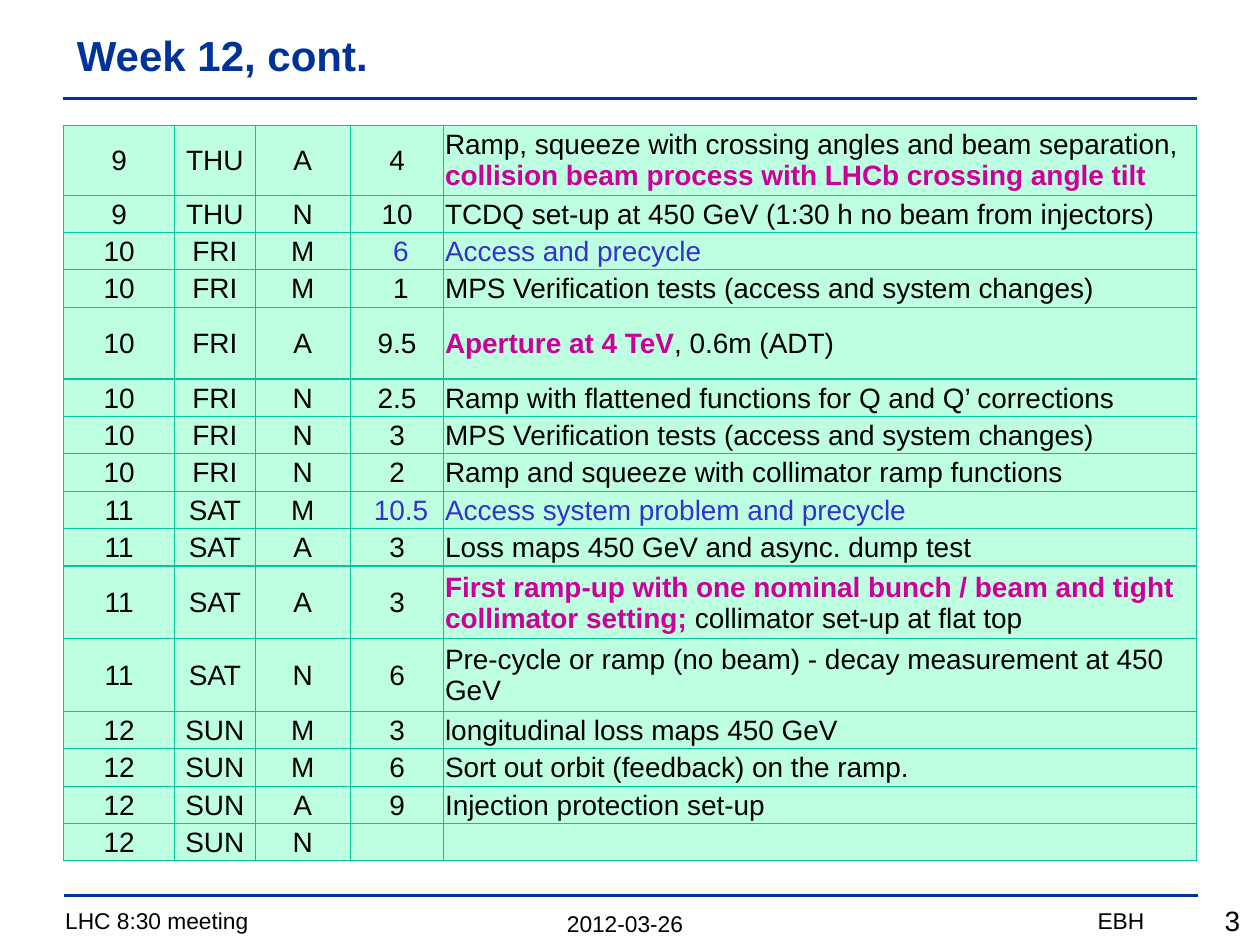
from dataclasses import dataclass

from lxml.etree import SubElement
from pptx import Presentation
from pptx.dml.color import RGBColor
from pptx.enum.text import MSO_ANCHOR, PP_ALIGN
from pptx.oxml.ns import qn
from pptx.util import Pt


@dataclass(frozen=True)
class Theme:
    font: str = "Arial"
    navy: str = "003399"
    text: str = "000000"
    access: str = "3333CC"
    highlight: str = "CC0099"
    cell: str = "BFFFE1"
    border: str = "00C896"
    title_size: float = 24
    body_size: float = 16
    footer_size: float = 13


THEME = Theme()
PLAIN = {}
ACCESS = {"color": THEME.access}
KEY = {"color": THEME.highlight, "bold": True}

TITLE = "Week 12, cont."
# Date, weekday, shift, hours, hours format, description spans
SCHEDULE = [
    ("9", "THU", "A", "4", PLAIN, [
        ("Ramp, squeeze with crossing angles and beam separation, ", PLAIN),
        ("collision beam process with LHCb crossing angle tilt", KEY)]),
    ("9", "THU", "N", "10", PLAIN, [("TCDQ set-up at 450 GeV (1:30 h no beam from injectors)", PLAIN)]),
    ("10", "FRI", "M", " 6", ACCESS, [("Access and precycle", ACCESS)]),
    ("10", "FRI", "M", " 1", PLAIN, [("MPS Verification tests (access and system changes)", PLAIN)]),
    ("10", "FRI", "A", "9.5", PLAIN, [("Aperture at 4 TeV", KEY), (", 0.6m (ADT)", PLAIN)]),
    ("10", "FRI", "N", "2.5", PLAIN, [("Ramp with flattened functions for Q and Q’ corrections", PLAIN)]),
    ("10", "FRI", "N", "3", PLAIN, [("MPS Verification tests (access and system changes)", PLAIN)]),
    ("10", "FRI", "N", "2", PLAIN, [("Ramp and squeeze with collimator ramp functions", PLAIN)]),
    ("11", "SAT", "M", " 10.5", ACCESS, [("Access system problem and precycle", ACCESS)]),
    ("11", "SAT", "A", "3", PLAIN, [("Loss maps 450 GeV and async. dump test", PLAIN)]),
    ("11", "SAT", "A", "3", PLAIN, [
        ("First ramp-up with one nominal bunch / beam and tight collimator setting; ", KEY),
        ("collimator set-up at flat top", PLAIN)]),
    ("11", "SAT", "N", "6", PLAIN, [("Pre-cycle or ramp (no beam) - decay measurement at 450 GeV", PLAIN)]),
    ("12", "SUN", "M", "3", PLAIN, [("longitudinal loss maps 450 GeV", PLAIN)]),
    ("12", "SUN", "M", "6", PLAIN, [("Sort out orbit (feedback) on the ramp.", PLAIN)]),
    ("12", "SUN", "A", "9", PLAIN, [("Injection protection set-up", PLAIN)]),
    ("12", "SUN", "N", "", PLAIN, []),
]
COLUMN_WIDTHS = [63.4, 46, 54.5, 53.4, 430.3]
ROW_HEIGHT = 21.4
TALL_ROWS = {0: 40, 4: 41, 10: 41.5, 11: 41.5}

# Text, (left, top, width, height), alignment, size
FOOTER = [
    ("2012-03-26", (174.2, 516.2, 365.8, 23), PP_ALIGN.CENTER, THEME.footer_size),
    ("LHC 8:30 meeting", (30.2, 514.8, 266.4, 23), PP_ALIGN.LEFT, THEME.footer_size),
    ("EBH", (450.7, 514.8, 210.2, 23), PP_ALIGN.RIGHT, THEME.footer_size),
    ("3", (632.9, 512.6, 82.8, 26.6), PP_ALIGN.RIGHT, THEME.body_size),
]
RULES = [(36, 56.2), (36.7, 511.9)]
RULE_LENGTH = 648


def add_span(para, text, size=THEME.body_size, color=THEME.text, bold=False, align=None):
    if align is not None:
        para.alignment = align
    span = para.add_run()
    span.text = text
    span.font.name = THEME.font
    span.font.size = Pt(size)
    span.font.bold = bold
    span.font.color.rgb = RGBColor.from_string(color)


def add_rule(slide, left, top):
    rule = slide.shapes.add_connector(1, Pt(left), Pt(top), Pt(left + RULE_LENGTH), Pt(top))
    rule.line.color.rgb = RGBColor.from_string(THEME.navy)
    rule.line.width = Pt(1.5)
    SubElement(rule.element.spPr, qn("a:effectLst"))


def format_cell(cell):
    cell.margin_left = cell.margin_right = cell.margin_top = Pt(0.72)
    cell.margin_bottom = 0
    cell.vertical_anchor = MSO_ANCHOR.MIDDLE
    properties = cell._tc.get_or_add_tcPr()
    for side in ("lnL", "lnR", "lnT", "lnB"):
        edge = SubElement(properties, qn(f"a:{side}"), w=str(Pt(0.75)))
        paint = SubElement(edge, qn("a:solidFill"))
        SubElement(paint, qn("a:srgbClr"), val=THEME.border)
    cell.fill.solid()
    cell.fill.fore_color.rgb = RGBColor.from_string(THEME.cell)


def add_schedule(slide):
    heights = [TALL_ROWS.get(index, ROW_HEIGHT) for index in range(len(SCHEDULE))]
    table = slide.shapes.add_table(
        len(SCHEDULE), len(COLUMN_WIDTHS), Pt(36.4), Pt(71.5),
        Pt(sum(COLUMN_WIDTHS)), Pt(sum(heights))).table
    table.first_row = table.horz_banding = False
    for column, width in zip(table.columns, COLUMN_WIDTHS):
        column.width = Pt(width)
    for row, height, entry in zip(table.rows, heights, SCHEDULE):
        row.height = Pt(height)
        date, day, shift, hours, hours_format, description = entry
        centred = [[(text, PLAIN)] for text in (date, day, shift)] + [[(hours, hours_format)]]
        for index, (cell, spans) in enumerate(zip(row.cells, centred + [description])):
            format_cell(cell)
            align = PP_ALIGN.CENTER if index < len(centred) else PP_ALIGN.LEFT
            for text, style in spans or [("", PLAIN)]:
                add_span(cell.text_frame.paragraphs[0], text, align=align, **style)


def add_title(slide):
    title = slide.shapes.title
    title.left, title.top, title.width, title.height = Pt(36.7), Pt(6.5), Pt(647.3), Pt(49)
    title.text_frame.vertical_anchor = MSO_ANCHOR.MIDDLE
    add_span(title.text_frame.paragraphs[0], TITLE, size=THEME.title_size,
             color=THEME.navy, bold=True, align=PP_ALIGN.LEFT)


def main():
    deck = Presentation()
    deck.slide_width, deck.slide_height = Pt(720), Pt(540)
    page = deck.slides.add_slide(deck.slide_layouts[5])
    add_title(page)
    for left, top in RULES:
        add_rule(page, left, top)
    add_schedule(page)
    for text, bounds, align, size in FOOTER:
        box = page.shapes.add_textbox(*map(Pt, bounds))
        box.text_frame.word_wrap = True
        add_span(box.text_frame.paragraphs[0], text, size=size, align=align)
    deck.save("out.pptx")


if __name__ == "__main__":
    main()
